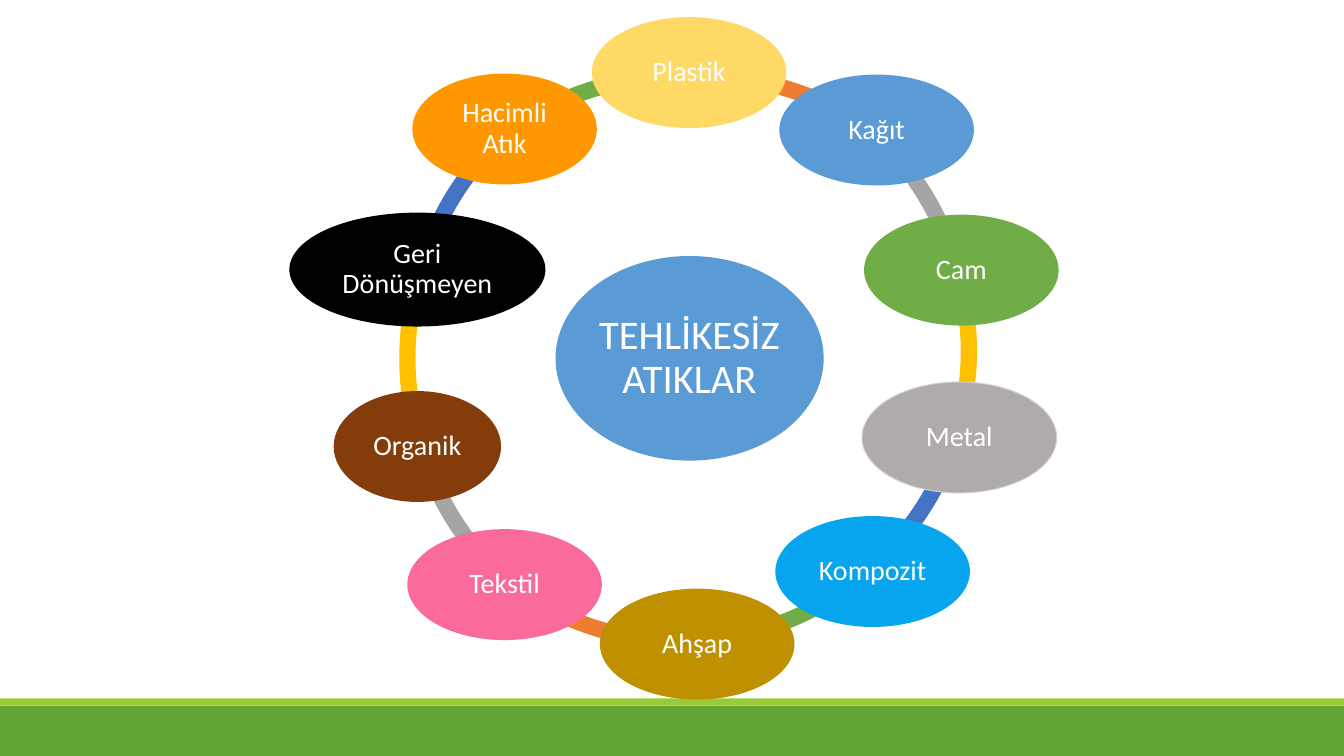
from pptx import Presentation
from pptx.dml.color import RGBColor as RGB
from pptx.enum.shapes import MSO_SHAPE as SHAPE
from pptx.enum.text import MSO_ANCHOR as ANCHOR, PP_ALIGN as ALIGN
from pptx.util import Inches, Pt

WHITE = RGB(0xFF, 0xFF, 0xFF)
BLACK = RGB(0x00, 0x00, 0x00)
BLUE = RGB(0x5B, 0x9B, 0xD5)
GREEN = RGB(0x70, 0xAD, 0x47)
INDIGO = RGB(0x44, 0x72, 0xC4)
AMBER = RGB(0xFF, 0xC0, 0x00)
GRAY = RGB(0xA5, 0xA5, 0xA5)
RUST = RGB(0xED, 0x7D, 0x31)
YELLOW = RGB(0xFF, 0xD9, 0x66)
SILVER = RGB(0xAF, 0xAB, 0xAB)
SILVER_EDGE = RGB(0xD0, 0xCE, 0xCE)
SKY = RGB(0x08, 0xA5, 0xEF)
GOLD = RGB(0xBF, 0x90, 0x00)
PINK = RGB(0xFA, 0x6A, 0x9D)
BROWN = RGB(0x84, 0x3C, 0x0B)
ORANGE = RGB(0xFF, 0x98, 0x00)
FOOTER_GREEN = RGB(0x63, 0xA5, 0x37)
FOOTER_LIME = RGB(0x99, 0xCB, 0x38)

FONT = "Calibri"
ARC_SIZE = 5.75
ARC_THICKNESS = 0.028
NODE_W, NODE_H = 1.93, 1.1

ARCS = [
    (0.96, 0.51, 139.891, 163.56, GREEN),
    (1.13, 0.37, 117.013, 137.228, INDIGO),
    (1.09, 0.51, 97.2, 118.8, AMBER),
    (1.12, 0.62, 78.63, 98.556, GRAY),
    (1.0, 0.52, 51.963, 76.715, RUST),
    (1.02, 0.52, 28.815, 52.16, GREEN),
    (1.06, 0.48, 10.019, 29.467, INDIGO),
    (1.07, 0.44, 206.063, 10.502, AMBER),
    (1.04, 0.34, 187.459, 207.417, GRAY),
    (1.25, 0.51, 160.115, 184.208, RUST),
]

NODES = [
    ("Plastik", 3.0, 0, NODE_W, NODE_H, YELLOW, None),
    ("Kağıt", 4.86, 0.57, NODE_W, NODE_H, BLUE, None),
    ("Cam", 5.7, 1.96, NODE_W, NODE_H, GREEN, None),
    ("Metal", 5.68, 3.62, NODE_W, NODE_H, SILVER, SILVER_EDGE),
    ("Kompozit", 4.82, 4.95, NODE_W, NODE_H, SKY, None),
    ("Ahşap", 3.08, 5.67, NODE_W, NODE_H, GOLD, None),
    ("Tekstil", 1.17, 5.08, NODE_W, NODE_H, PINK, None),
    ("Organik", 0.44, 3.71, 1.66, NODE_H, BROWN, None),
    ("Geri Dönüşmeyen", 0, 1.94, 2.54, 1.13, BLACK, None),
    ("Hacimli Atık", 1.22, 0.56, 1.83, NODE_H, ORANGE, None),
]


def add_filled(s, kind, x, y, w, h, fill, edge=None):
    """Add a flat preset shape with an optional thin edge."""
    sp = s.shapes.add_shape(kind, Inches(x), Inches(y), Inches(w), Inches(h))
    sp.shadow.inherit = False
    sp.fill.solid()
    sp.fill.fore_color.rgb = fill
    if edge is None:
        sp.line.fill.background()
    else:
        sp.line.color.rgb = edge
        sp.line.width = Pt(0.75)
    return sp


def write_text(sp, text, *, size, inset, color=WHITE, align=ALIGN.CENTER):
    """Write one vertically centred paragraph inside a shape."""
    tf = sp.text_frame
    tf.word_wrap = True
    tf.vertical_anchor = ANCHOR.MIDDLE
    tf.margin_left = tf.margin_right = Inches(inset)
    tf.margin_top = tf.margin_bottom = Inches(inset)
    p = tf.paragraphs[0]
    p.alignment = align
    p.line_spacing = 0.9
    r = p.add_run()
    r.text = text
    r.font.name = FONT
    r.font.size = Pt(size)
    r.font.color.rgb = color


def add_footer(s, x, y, w, h):
    """Draw the green band with its lime strip on top."""
    strip = 0.07
    add_filled(s, SHAPE.RECTANGLE, x, y + strip, w, h - strip, FOOTER_GREEN)
    add_filled(s, SHAPE.RECTANGLE, x, y, w, strip, FOOTER_LIME)


def add_ring(s, x, y):
    """Draw the coloured arcs that link the waste types."""
    for dx, dy, start, end, color in ARCS:
        sp = add_filled(s, SHAPE.BLOCK_ARC, x + dx, y + dy, ARC_SIZE, ARC_SIZE, color)
        for i, value in enumerate((start, end, ARC_THICKNESS)):
            sp.adjustments[i] = value


def add_waste_cycle(s, x, y):
    """Draw the ring, the central topic and the waste types around it."""
    add_ring(s, x, y)
    topic = add_filled(s, SHAPE.OVAL, x + 2.64, y + 2.37, 2.66, 2.03, BLUE)
    write_text(topic, "TEHLİKESİZ ATIKLAR", size=29, inset=0.04)
    for label, dx, dy, w, h, fill, edge in NODES:
        node = add_filled(s, SHAPE.OVAL, x + dx, y + dy, w, h, fill, edge)
        write_text(node, label, size=20, inset=0.03)


def main():
    """Build and save the slide."""
    prs = Presentation()
    prs.slide_width, prs.slide_height = Inches(13.33), Inches(7.5)
    s = prs.slides.add_slide(prs.slide_layouts[6])
    add_footer(s, 0, 6.93, 13.33, 0.57)
    add_waste_cycle(s, 2.87, 0.17)
    prs.save("out.pptx")


if __name__ == "__main__":
    main()
